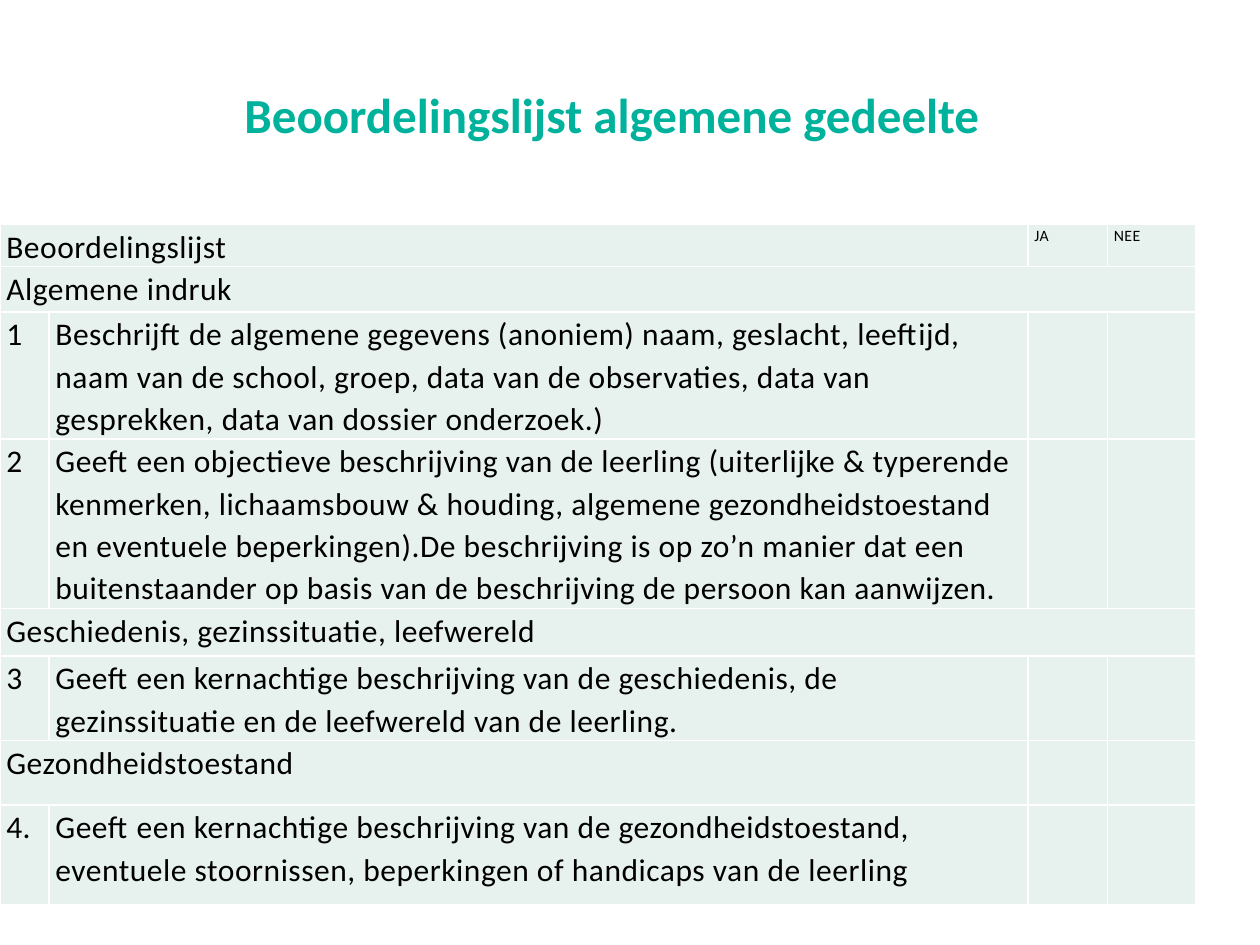
from lxml.etree import SubElement
from pptx import Presentation
from pptx.dml.color import RGBColor
from pptx.enum.text import MSO_ANCHOR, PP_ALIGN
from pptx.oxml.ns import qn
from pptx.util import Inches, Pt

FONT = "Calibri"
COLORS = {"title": "00B29C", "text": "000000", "cell": "E7F2EF", "line": "FFFFFF"}
COLS = [0.39, 7.77, 0.63, 0.7]
ROWS = [
    (0.33, 2, ["Beoordelingslijst", "", "JA", "NEE"]),
    (0.36, 4, ["Algemene indruk"]),
    (1.01, 1, ["1", "Beschrijft de algemene gegevens (anoniem) naam, geslacht, leeftijd, "
               "naam van de school, groep, data van de observaties, data van gesprekken, "
               "data van dossier onderzoek.)"]),
    (1.33, 1, ["2", "Geeft een objectieve beschrijving van de leerling (uiterlijke & typerende "
               "kenmerken, lichaamsbouw & houding, algemene gezondheidstoestand en eventuele "
               "beperkingen).De beschrijving is op zo’n manier dat een buitenstaander op basis "
               "van de beschrijving de persoon kan aanwijzen."]),
    (0.38, 4, ["Geschiedenis, gezinssituatie, leefwereld"]),
    (0.66, 1, ["3", "Geeft een kernachtige beschrijving van de geschiedenis, de gezinssituatie "
               "en de leefwereld van de leerling."]),
    (0.51, 2, ["Gezondheidstoestand"]),
    (0.79, 1, ["4.", "Geeft een kernachtige beschrijving van de gezondheidstoestand, eventuele "
               "stoornissen, beperkingen of handicaps van de leerling"]),
]


def add_run(para, text, size, color, bold=False):
    run = para.add_run()
    run.text = text
    font = run.font
    font.name, font.size, font.bold = FONT, Pt(size), bold
    font.color.rgb = RGBColor.from_string(COLORS[color])
    return run


def add_title(slide, left, top, width, height):
    title = slide.shapes.title
    title.left, title.top = Inches(left), Inches(top)
    title.width, title.height = Inches(width), Inches(height)
    frame = title.text_frame
    frame.word_wrap = True
    frame.vertical_anchor = MSO_ANCHOR.BOTTOM
    para = frame.paragraphs[0]
    para.alignment = PP_ALIGN.LEFT
    add_run(para, "Beoordelingslijst algemene gedeelte", 28, "title", True)


def style_cell(cell):
    cell.margin_left = cell.margin_right = Inches(0.05)
    cell.margin_top = cell.margin_bottom = 0
    props = cell._tc.get_or_add_tcPr()
    for side in ("lnL", "lnR", "lnT", "lnB"):
        line = SubElement(props, qn(f"a:{side}"), w=str(Pt(1)))
        fill = SubElement(line, qn("a:solidFill"))
        SubElement(fill, qn("a:srgbClr"), val=COLORS["line"])
    cell.fill.solid()
    cell.fill.fore_color.rgb = RGBColor.from_string(COLORS["cell"])


def add_list(slide, left, top):
    high = sum(row[0] for row in ROWS)
    table = slide.shapes.add_table(
        len(ROWS), len(COLS), Inches(left), Inches(top), Inches(sum(COLS)), Inches(high)
    ).table
    table.first_row = table.horz_banding = False
    for col, width in zip(table.columns, COLS):
        col.width = Inches(width)
    for i, (height, span, texts) in enumerate(ROWS):
        table.rows[i].height = Inches(height)
        for j in range(len(COLS)):
            style_cell(table.cell(i, j))
        if span > 1:
            table.cell(i, 0).merge(table.cell(i, span - 1))
        for j, text in enumerate(texts):
            if text:
                para = table.cell(i, j).text_frame.paragraphs[0]
                para.line_spacing = 1.1
                run = add_run(para, text, 9 if j > 1 else 18, "text")
                run._r.get_or_add_rPr().set("spc", "30")


def main():
    deck = Presentation()
    deck.slide_width, deck.slide_height = Inches(10), Inches(7.5)
    slide = deck.slides.add_slide(deck.slide_layouts[5])
    add_title(slide, 1.84, 0.25, 7.65, 0.94)
    add_list(slide, 0, 1.78)
    deck.save("out.pptx")


if __name__ == "__main__":
    main()
